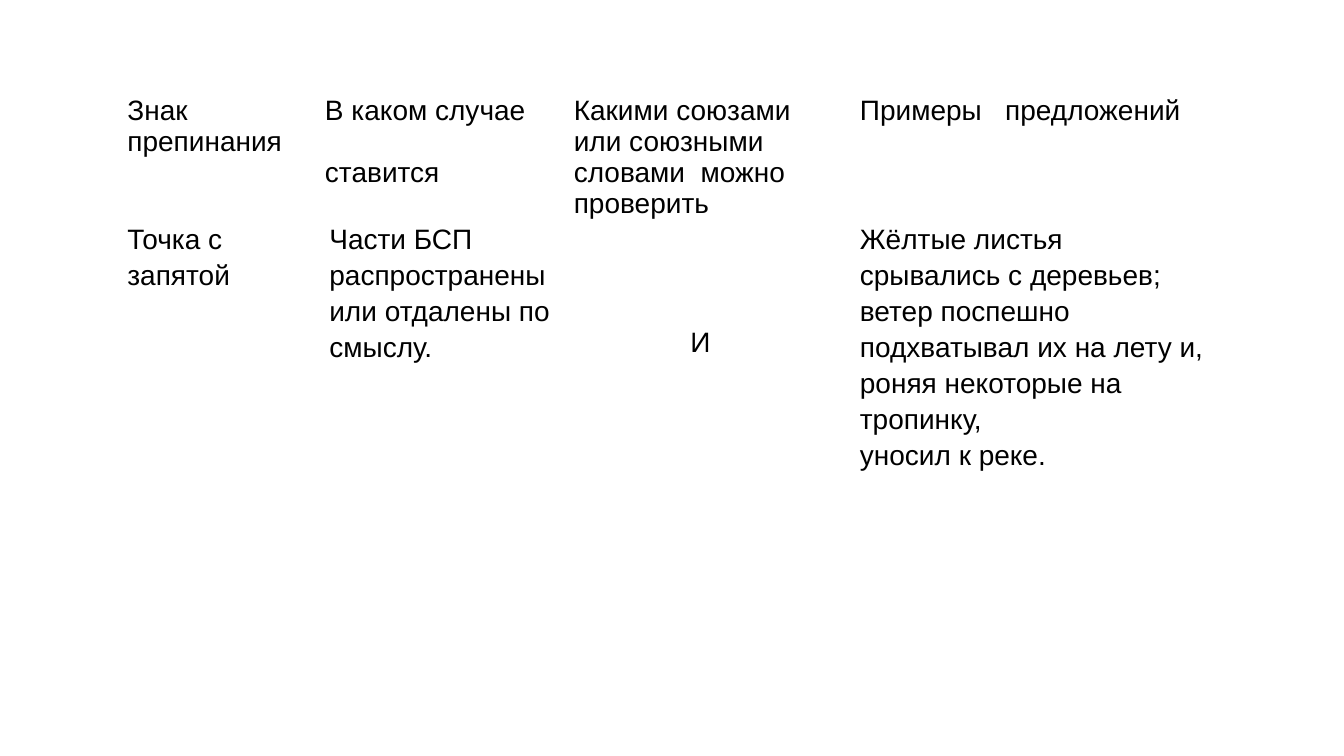
from dataclasses import dataclass

from pptx import Presentation
from pptx.dml.color import RGBColor
from pptx.util import Cm, Pt


@dataclass(frozen=True)
class Theme:
    font: str = "Arial"
    size: float = 20
    text: RGBColor = RGBColor(0, 0, 0)
    header_spacing: float = 1.0
    body_spacing: float = 1.15
    side_margin: float = 0.19


@dataclass(frozen=True)
class CellText:
    paragraphs: tuple
    side_margin: float = Theme.side_margin
    top_margin: float = 0
    indent: float = 0
    paragraph_gap: float = 0


class SlideBuilder:
    def __init__(self, slide, theme):
        self.slide = slide
        self.theme = theme

    def add_table(self, left, top, widths, heights, rows):
        frame = self.slide.shapes.add_table(
            len(rows), len(widths), Cm(left), Cm(top), Cm(sum(widths)), Cm(sum(heights))
        )
        table = frame.table
        table.first_row = False
        table.horz_banding = False
        for column, width in zip(table.columns, widths):
            column.width = Cm(width)
        for row, height in zip(table.rows, heights):
            row.height = Cm(height)
        for row_index, row_texts in enumerate(rows):
            spacing = self.theme.body_spacing if row_index else self.theme.header_spacing
            for column_index, content in enumerate(row_texts):
                self.fill_cell(table.cell(row_index, column_index), content, spacing)

    def fill_cell(self, cell, content, spacing):
        cell.fill.background()
        cell.margin_left = cell.margin_right = Cm(content.side_margin + content.indent)
        cell.margin_right = Cm(content.side_margin)
        cell.margin_top = Cm(content.top_margin)
        cell.margin_bottom = 0
        cell.text_frame.text = "\n".join(content.paragraphs)
        for index, paragraph in enumerate(cell.text_frame.paragraphs):
            paragraph.line_spacing = spacing
            paragraph.space_before = Pt(content.paragraph_gap if index else 0)
            for run in paragraph.runs:
                run.font.name = self.theme.font
                run.font.size = Pt(self.theme.size)
                run.font.color.rgb = self.theme.text


HEADERS = (
    CellText(("Знак", "препинания")),
    CellText(("В каком случае", "ставится"), paragraph_gap=22.5),
    CellText(("Какими союзами", "или союзными словами  можно проверить")),
    CellText(("Примеры   предложений",)),
)
SEMICOLON_RULE = (
    CellText(("Точка с запятой",)),
    CellText(("Части БСП распространены или отдалены по смыслу.",), side_margin=0.3),
    CellText(("И",), top_margin=2.59, indent=2.94),
    CellText((
        "Жёлтые листья срывались с деревьев; ветер поспешно подхватывал их на лету и, роняя некоторые на",
        "тропинку,",
        "уносил к реке.",
    )),
)


def main():
    presentation = Presentation()
    presentation.slide_width = Cm(33.87)
    presentation.slide_height = Cm(19.05)
    slide = presentation.slides.add_slide(presentation.slide_layouts[6])
    builder = SlideBuilder(slide, Theme())
    builder.add_table(
        left=3.02,
        top=2.39,
        widths=(4.98, 6.27, 7.21, 9.12),
        heights=(3.15, 7.06),
        rows=(HEADERS, SEMICOLON_RULE),
    )
    presentation.save("out.pptx")


if __name__ == "__main__":
    main()
